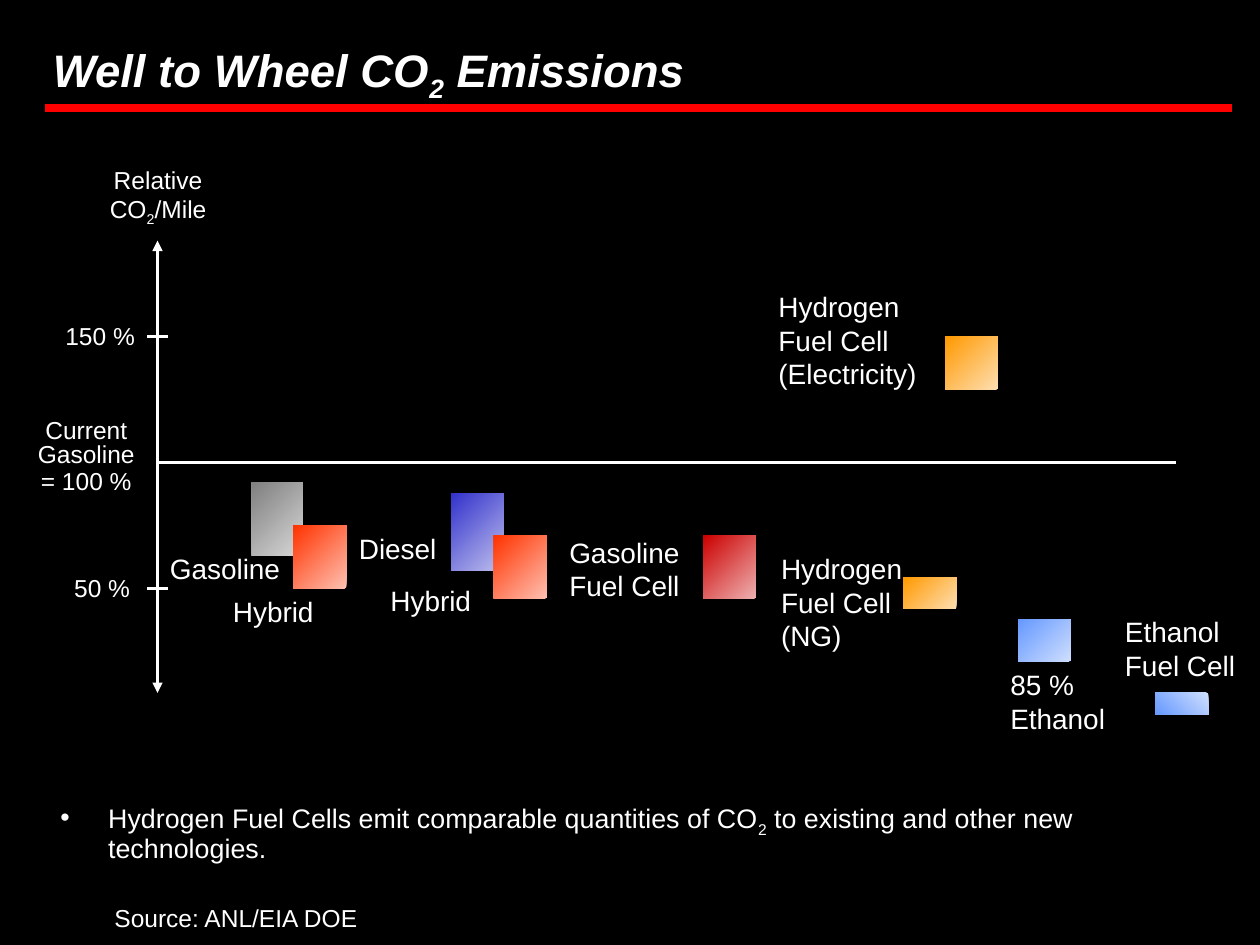
from dataclasses import dataclass

from lxml.etree import SubElement
from pptx import Presentation
from pptx.dml.color import RGBColor
from pptx.enum.shapes import MSO_CONNECTOR as Line, MSO_SHAPE as Shape
from pptx.enum.text import MSO_ANCHOR as Anchor, MSO_AUTO_SIZE as Fit, PP_ALIGN as Align
from pptx.oxml.ns import qn
from pptx.util import Inches, Pt


@dataclass(frozen=True)
class Theme:
    """Colours as hex, gradients as light and dark ends, type sizes in points."""
    font: str = "Arial"
    back: str = "000000"
    text: str = "FFFFFF"
    rule: str = "FF0000"
    gray: tuple = ("D7D7D7", "808080")
    red: tuple = ("FEC0B1", "FF3300")
    blue: tuple = ("C0C0EE", "3333CC")
    crimson: tuple = ("EEB1B1", "CC0000")
    orange: tuple = ("FEDFB1", "FF9900")
    sky: tuple = ("CFDFFE", "6699FF")
    title: float = 26
    label: float = 16
    body: float = 15.3
    axis: float = 14


T = Theme()


def rgb(value):
    """Turn a hex string into a colour."""
    return RGBColor.from_string(value)


def write(sp, text, size=T.label, bold=False, italic=False, align=Align.LEFT, spacing=1.0, wrap=True):
    """Fill a shape with lines of text, where _x_ marks a subscript."""
    tf = sp.text_frame
    tf.word_wrap = wrap
    tf.auto_size = Fit.NONE
    tf.vertical_anchor = Anchor.TOP
    for i, line in enumerate(text.split("\n")):
        p = tf.add_paragraph() if i else tf.paragraphs[0]
        p.alignment, p.line_spacing = align, spacing
        p.space_before = p.space_after = Pt(0)
        for j, part in enumerate(line.split("_")):
            r = p.add_run()
            r.text = part
            f = r.font
            f.name, f.size, f.bold, f.italic = T.font, Pt(size), bold, italic
            f.color.rgb = rgb(T.text)
            if j % 2:
                r._r.get_or_add_rPr().set("baseline", "-25000")
    return tf


def add_text(s, x, y, w, h, text, **fmt):
    """Add a text box."""
    return write(s.shapes.add_textbox(Inches(x), Inches(y), Inches(w), Inches(h)), text, **fmt)


def add_line(s, x1, y1, x2, y2, color=T.text, width=1.5, arrows=False):
    """Add a straight line, with arrowheads at both ends if asked."""
    c = s.shapes.add_connector(Line.STRAIGHT, Inches(x1), Inches(y1), Inches(x2), Inches(y2))
    c.line.color.rgb = rgb(color)
    c.line.width = Pt(width)
    if arrows:
        for end in ("a:headEnd", "a:tailEnd"):
            SubElement(c.line._get_or_add_ln(), qn(end), type="triangle")
    SubElement(c._element.spPr, qn("a:effectLst"))


def add_range(s, x, top, bottom, colors, width=0.42, angle=135):
    """Add a gradient block between two heights."""
    sp = s.shapes.add_shape(Shape.RECTANGLE, Inches(x), Inches(top), Inches(width), Inches(bottom - top))
    sp.shadow.inherit = False
    sp.line.fill.background()
    sp.fill.gradient()
    sp.fill.gradient_angle = angle
    for stop, position, color in zip(sp.fill.gradient_stops, (0, 1), colors):
        stop.position = position
        stop.color.rgb = rgb(color)


def add_title(s, x, y, w, h):
    """Place the title and the rule under it."""
    add_line(s, x, y + h, x + w, y + h, color=T.rule, width=4.5)
    sp = s.shapes.title
    sp.left, sp.top, sp.width, sp.height = Inches(x - 0.04), Inches(y), Inches(5.22), Inches(h)
    write(sp, "Well to Wheel CO_2_ Emissions", size=T.title, bold=True, italic=True, wrap=False)


def add_chart_area(s, x, y, w, h):
    """Draw the axis, the ranges in percent of current gasoline and their labels."""
    def level(percent):
        """Give the height of a percentage on the axis."""
        return y + 1.76 + (100 - percent) * 0.02

    ranges = [
        (0.75, 92, 63, T.gray, {"width": 0.4}),
        (1.08, 75, 50, T.red, {}),
        (2.33, 87.5, 57, T.blue, {}),
        (2.67, 71, 46, T.red, {}),
        (4.33, 71, 46, T.crimson, {}),
        (6.83, 37.5, 21, T.sky, {}),
        (5.92, 54.5, 42, T.orange, {}),
        (6.25, 150, 129, T.orange, {}),
        (7.92, 8.5, 0, T.sky, {"angle": 225}),
    ]
    for dx, high, low, colors, options in ranges:
        add_range(s, x + dx, level(high), level(low), colors, **options)

    labels = [
        (0, 2.42, 1.25, "Gasoline"),
        (0.5, 2.76, 1.25, "Hybrid"),
        (1.5, 2.26, 1.25, "Diesel"),
        (1.75, 2.67, 1.25, "Hybrid"),
        (3.17, 2.29, 1.25, "Gasoline Fuel Cell"),
        (4.85, 2.42, 1.25, "Hydrogen Fuel Cell (NG)"),
        (4.83, 0.34, 1.42, "Hydrogen Fuel Cell (Electricity)"),
        (6.67, 3.34, 1.25, "85 % Ethanol"),
        (7.58, 2.92, 1.25, "Ethanol Fuel Cell"),
    ]
    for dx, dy, width, text in labels:
        add_text(s, x + dx, y + dy, width, 0.37 + 0.27 * text.count(" "), text)

    add_line(s, x, level(100), x + w, level(100))
    add_line(s, x, y, x, y + h, arrows=True)
    for percent, dx in ((150, -0.83), (50, -0.76)):
        add_line(s, x - 0.08, level(percent), x + 0.08, level(percent))
        add_text(s, x + dx, level(percent) - 0.17, 1.25, 0.34, f"{percent} %", size=T.axis)

    centred = {"size": T.axis, "align": Align.CENTER}
    add_text(s, x - 0.61, y - 0.65, 1.23, 0.6, "Relative\nCO_2_/Mile", **centred)
    add_text(s, x - 1.19, y + 1.38, 1.25, 0.48, "Current Gasoline", spacing=0.8, **centred)
    add_text(s, x - 1.19, y + 1.74, 1.25, 0.34, "= 100 %", **centred)


def add_takeaway(s, x, y, w, h):
    """Place the bulleted conclusion and the source line."""
    text = "Hydrogen Fuel Cells emit comparable quantities of CO_2_ to existing and other new technologies."
    tf = add_text(s, x, y, w, h, text, size=T.body, spacing=0.9)
    pPr = tf.paragraphs[0]._p.get_or_add_pPr()
    indent = Inches(0.38)
    pPr.set("marL", str(indent))
    pPr.set("indent", str(-indent))
    SubElement(SubElement(pPr, qn("a:buClr")), qn("a:srgbClr"), val=T.text)
    SubElement(pPr, qn("a:buFont"), typeface=T.font)
    SubElement(pPr, qn("a:buChar"), char="•")
    add_text(s, x + 0.43, y + 0.8, 2.15, 0.34, "Source: ANL/EIA DOE", size=T.axis, wrap=False)


def main():
    """Build the slide and save it."""
    prs = Presentation()
    prs.slide_width, prs.slide_height = Inches(10), Inches(7.5)
    s = prs.slides.add_slide(prs.slide_layouts[5])
    s.background.fill.solid()
    s.background.fill.fore_color.rgb = rgb(T.back)
    add_title(s, 0.36, 0.28, 9.42, 0.58)
    add_chart_area(s, 1.25, 1.91, 8.08, 3.59)
    add_takeaway(s, 0.38, 6.32, 9.49, 0.53)
    prs.save("out.pptx")


if __name__ == "__main__":
    main()
